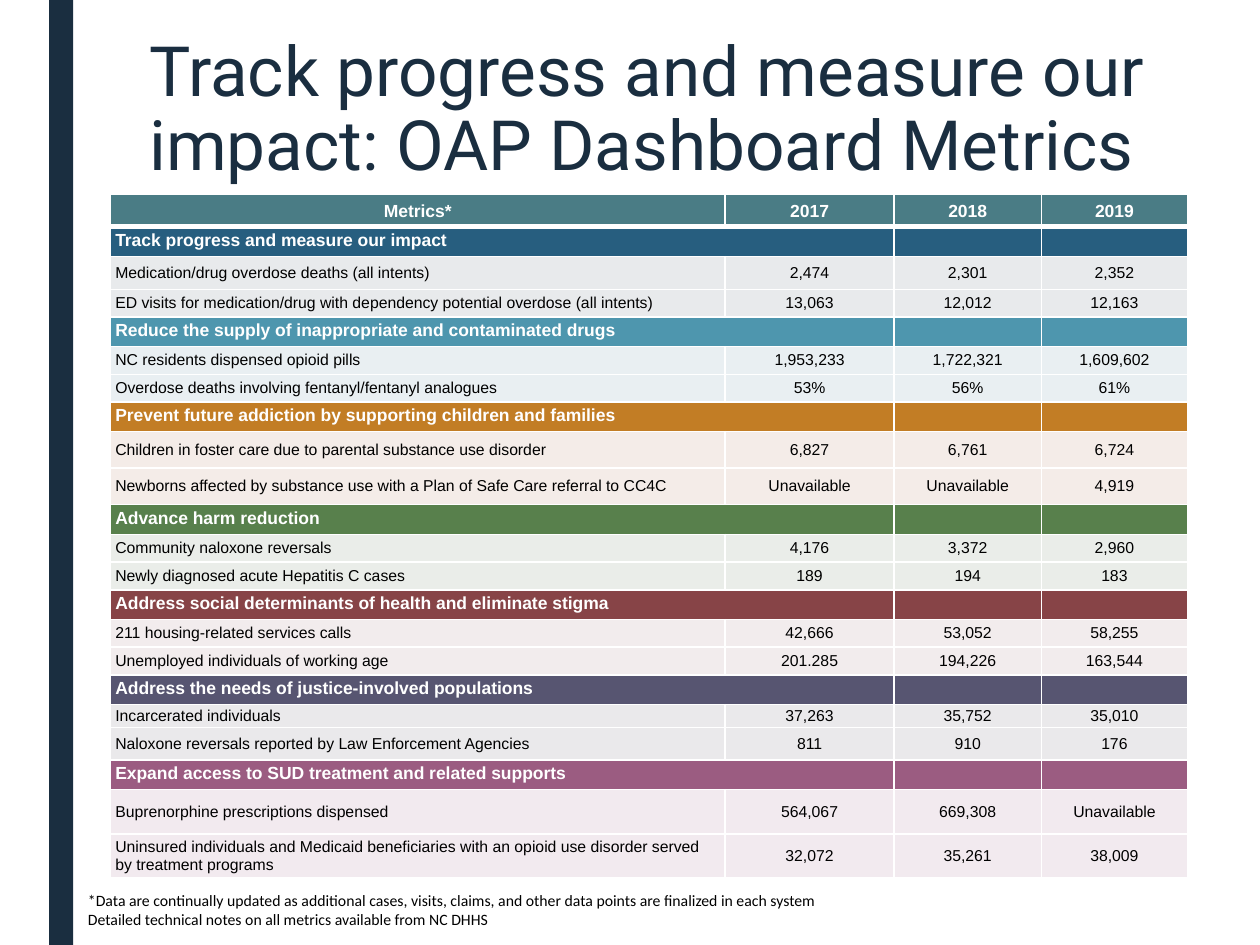
from dataclasses import dataclass

from lxml.etree import SubElement
from pptx import Presentation
from pptx.dml.color import RGBColor
from pptx.enum.shapes import MSO_SHAPE
from pptx.enum.text import MSO_ANCHOR, MSO_AUTO_SIZE, PP_ALIGN
from pptx.oxml.ns import qn
from pptx.util import Inches, Length, Pt

COLORS = {
    "navy": "1A2E40", "white": "FFFFFF", "black": "000000", "header": "4A7C85",
    "blue": "275E7F", "pale blue": "E8EAEC", "teal": "4E96AE", "pale teal": "E9EFF2",
    "orange": "C27D25", "pale orange": "F4ECE8", "green": "58804C", "pale green": "EAEDE9",
    "red": "874447", "pale red": "F2ECED", "violet": "575571", "pale violet": "EAE9EB",
    "plum": "9B5C81", "pale plum": "F2EAEF",
}
GRID_COLUMNS, GRID_ROWS = 100, 75
SLIDE_WIDTH, SLIDE_HEIGHT = Inches(10), Inches(7.5)
COLUMN_SPANS = (48.8, 13.4, 11.7, 11.6)
HEADINGS = ("Metrics*", "2017", "2018", "2019")
HEADER_SPAN, SECTION_SPAN = 2.6, 2.36


@dataclass(frozen=True)
class Area:
    left: float
    top: float
    width: float
    height: float

    def place(self) -> tuple[Length, ...]:
        return across(self.left), down(self.top), across(self.width), down(self.height)


@dataclass(frozen=True)
class Metric:
    name: str
    values: tuple[str, str, str]
    span: float = 2.2


@dataclass(frozen=True)
class Section:
    title: str
    color: str
    metrics: tuple[Metric, ...]


@dataclass(frozen=True)
class CellStyle:
    fill: str
    color: str = "black"
    size: float = 9
    bold: bool = False
    spacing: float | Length = Pt(10)
    top_line: float = 1
    bottom_line: float = 1


SECTIONS = (
    Section("Track progress and measure our impact", "blue", (
        Metric("Medication/drug overdose deaths (all intents)", ("2,474", "2,301", "2,352"), 2.6),
        Metric("ED visits for medication/drug with dependency potential overdose (all intents)",
               ("13,063", "12,012", "12,163")),
    )),
    Section("Reduce the supply of inappropriate and contaminated drugs", "teal", (
        Metric("NC residents dispensed opioid pills", ("1,953,233", "1,722,321", "1,609,602")),
        Metric("Overdose deaths involving fentanyl/fentanyl analogues", ("53%", "56%", "61%")),
    )),
    Section("Prevent future addiction by supporting children and families", "orange", (
        Metric("Children in foster care due to parental substance use disorder",
               ("6,827", "6,761", "6,724"), 2.9),
        Metric("Newborns affected by substance use with a Plan of Safe Care referral to CC4C",
               ("Unavailable", "Unavailable", "4,919"), 2.9),
    )),
    Section("Advance harm reduction", "green", (
        Metric("Community naloxone reversals", ("4,176", "3,372", "2,960")),
        Metric("Newly diagnosed acute Hepatitis C cases", ("189", "194", "183")),
    )),
    Section("Address social determinants of health and eliminate stigma", "red", (
        Metric("211 housing-related services calls", ("42,666", "53,052", "58,255")),
        Metric("Unemployed individuals of working age", ("201.285", "194,226", "163,544")),
    )),
    Section("Address the needs of justice-involved populations", "violet", (
        Metric("Incarcerated individuals", ("37,263", "35,752", "35,010"), 1.8),
        Metric("Naloxone reversals reported by Law Enforcement Agencies",
               ("811", "910", "176"), 2.6),
    )),
    Section("Expand access to SUD treatment and related supports", "plum", (
        Metric("Buprenorphine prescriptions dispensed", ("564,067", "669,308", "Unavailable"), 3.5),
        Metric("Uninsured individuals and Medicaid beneficiaries with an opioid use disorder "
               "served by treatment programs", ("32,072", "35,261", "38,009"), 3.5),
    )),
)


def across(columns: float) -> Length:
    return Length(round(SLIDE_WIDTH * columns / GRID_COLUMNS))


def down(rows: float) -> Length:
    return Length(round(SLIDE_HEIGHT * rows / GRID_ROWS))


def rgb(name: str) -> RGBColor:
    return RGBColor.from_string(COLORS[name])


def format_runs(paragraph, font: str, size: float, color: str, bold: bool = False) -> None:
    for run in paragraph.runs:
        run.font.name, run.font.size, run.font.bold = font, Pt(size), bold
        run.font.color.rgb = rgb(color)


def draw_bar(slide, area: Area) -> None:
    bar = slide.shapes.add_shape(MSO_SHAPE.RECTANGLE, *area.place())
    bar.shadow.inherit = False
    bar.fill.solid()
    bar.fill.fore_color.rgb = rgb("navy")
    bar.line.fill.background()


def draw_title(slide, area: Area, text: str) -> None:
    title = slide.shapes.title
    title.left, title.top, title.width, title.height = area.place()
    text_frame = title.text_frame
    text_frame.text = text
    text_frame.word_wrap = True
    text_frame.auto_size = MSO_AUTO_SIZE.NONE
    text_frame.vertical_anchor = MSO_ANCHOR.TOP
    paragraph = text_frame.paragraphs[0]
    paragraph.alignment, paragraph.line_spacing = PP_ALIGN.LEFT, 0.89
    format_runs(paragraph, "Roboto", 39.6, "navy")


def draw_footnote(slide, area: Area, text: str) -> None:
    text_frame = slide.shapes.add_textbox(*area.place()).text_frame
    text_frame.word_wrap = True
    text_frame.text = text
    for paragraph in text_frame.paragraphs:
        format_runs(paragraph, "Calibri", 9, "black")


def draw_borders(cell, style: CellStyle) -> None:
    properties = cell._tc.get_or_add_tcPr()
    widths = {"lnL": 1, "lnR": 1, "lnT": style.top_line, "lnB": style.bottom_line}
    for side, width in widths.items():
        line = SubElement(properties, qn(f"a:{side}"), w=str(Pt(width)))
        fill = SubElement(line, qn("a:solidFill"))
        SubElement(fill, qn("a:srgbClr"), val=COLORS["white"])


def fill_row(table, row: int, texts: tuple[str, ...], style: CellStyle,
             first_alignment: PP_ALIGN = PP_ALIGN.LEFT) -> None:
    for column, text in enumerate(texts):
        cell = table.cell(row, column)
        draw_borders(cell, style)
        cell.fill.solid()
        cell.fill.fore_color.rgb = rgb(style.fill)
        cell.vertical_anchor = MSO_ANCHOR.MIDDLE
        cell.margin_left = cell.margin_right = Inches(0.04)
        cell.margin_top = cell.margin_bottom = Inches(0.02)
        paragraph = cell.text_frame.paragraphs[0]
        paragraph.alignment = PP_ALIGN.CENTER if column else first_alignment
        paragraph.line_spacing = style.spacing
        if text:
            paragraph.text = text
            format_runs(paragraph, "Arial", style.size, style.color, style.bold)
        else:
            SubElement(paragraph._p, qn("a:endParaRPr"), sz=str(style.size * 100))


def draw_metrics(slide, left: float, top: float) -> None:
    spans = [HEADER_SPAN]
    for section in SECTIONS:
        spans += [SECTION_SPAN, *(metric.span for metric in section.metrics)]
    area = Area(left, top, sum(COLUMN_SPANS), sum(spans))
    table = slide.shapes.add_table(len(spans), len(COLUMN_SPANS), *area.place()).table
    table.first_row = table.horz_banding = False
    for column, span in zip(table.columns, COLUMN_SPANS):
        column.width = across(span)
    for row, span in zip(table.rows, spans):
        row.height = down(span)

    header = CellStyle("header", "white", 10, True, 1.15, bottom_line=3)
    fill_row(table, 0, HEADINGS, header, PP_ALIGN.CENTER)
    row = 1
    for section in SECTIONS:
        style = CellStyle(section.color, "white", 10, True, top_line=3 if row == 1 else 1)
        fill_row(table, row, (section.title, "", "", ""), style)
        table.cell(row, 0).merge(table.cell(row, 1))
        for row, metric in enumerate(section.metrics, row + 1):
            fill_row(table, row, (metric.name, *metric.values), CellStyle(f"pale {section.color}"))
        row += 1


def main() -> None:
    """Build the dashboard metrics slide."""
    presentation = Presentation()
    presentation.slide_width, presentation.slide_height = SLIDE_WIDTH, SLIDE_HEIGHT
    slide = presentation.slides.add_slide(presentation.slide_layouts.get_by_name("Title Only"))
    draw_bar(slide, Area(3.9, 0, 1.9, GRID_ROWS))
    draw_title(slide, Area(10.85, 2.45, 83.8, 16.4),
               "Track progress and measure our impact: OAP Dashboard Metrics")
    draw_footnote(slide, Area(6, 70.2, 88, 4.7),
                  "*Data are continually updated as additional cases, visits, claims, and other "
                  "data points are finalized in each system\n"
                  "Detailed technical notes on all metrics available from NC DHHS")
    draw_metrics(slide, 8.75, 15.4)
    presentation.save("out.pptx")


if __name__ == "__main__":
    main()
